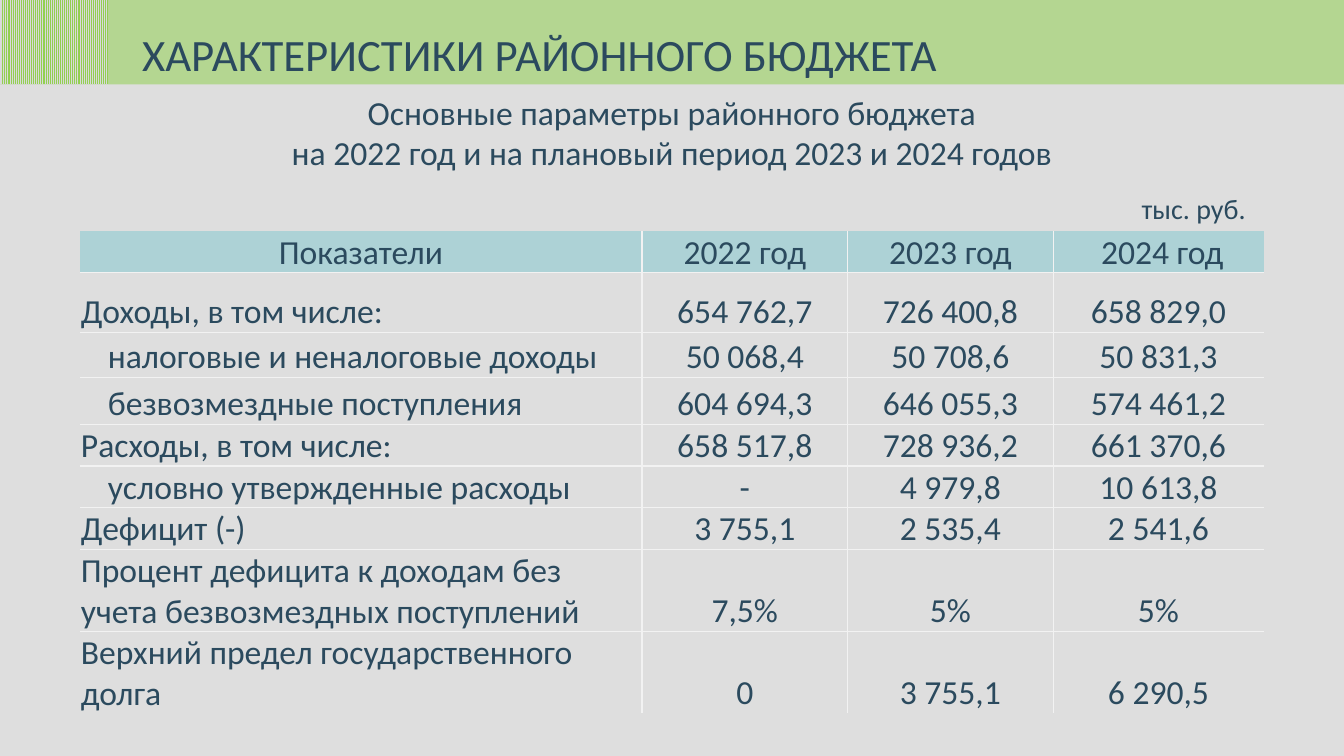
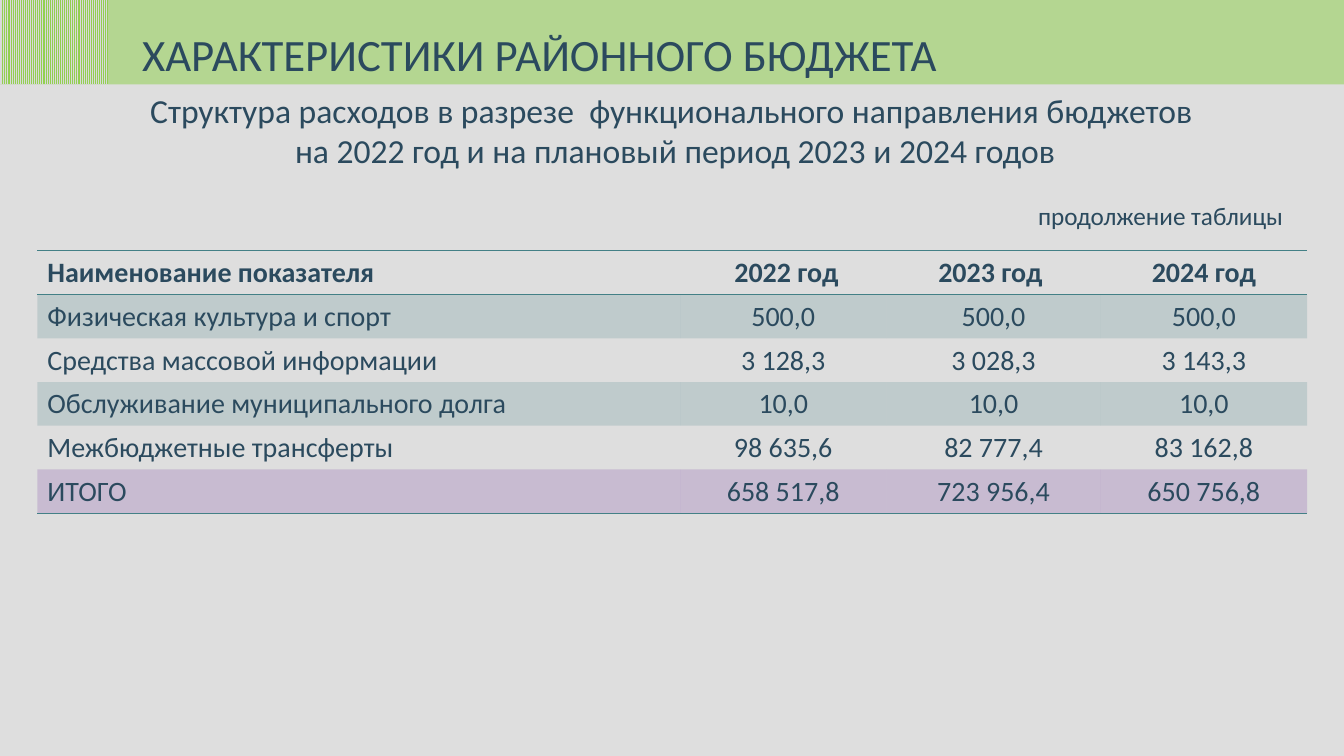
import pptx
import pptx.dml.color
import pptx.enum.dml
import pptx.enum.shapes
import pptx.enum.text
import pptx.oxml
import pptx.oxml.ns
import pptx.util

Cm = pptx.util.Cm
Pt = pptx.util.Pt
qn = pptx.oxml.ns.qn
ALIGN = pptx.enum.text.PP_ALIGN
ANCHOR = pptx.enum.text.MSO_ANCHOR

COLORS = {
    "background": "DEDEDE",
    "text": "2B4A5E",
    "green": "92D050",
    "stripe": "D9D9D9",
    "header": "ADD2D6",
    "grid": "F2F2F2",
    "teal": "438086",
    "total": "7030A0",
}
FONT = "Calibri"
TITLE = "ХАРАКТЕРИСТИКИ РАЙОННОГО БЮДЖЕТА"
SLIDE_W, SLIDE_H, BAND_H = 33.87, 19.05, 2.13
NO_STYLE = "{2D5ABB26-0587-4C30-8999-92F81FD0307C}"

PARAMETERS = [
    ("Показатели", "2022 год", "2023 год", " 2024 год"),
    ("Доходы, в том числе:", "654 762,7", "726 400,8", "658 829,0"),
    ("налоговые и неналоговые доходы", "50 068,4", "50 708,6", "50 831,3"),
    ("безвозмездные поступления", "604 694,3", "646 055,3", "574 461,2"),
    ("Расходы, в том числе:", "658 517,8", "728 936,2", "661 370,6"),
    ("условно утвержденные расходы", "-", "4 979,8", "10 613,8"),
    ("Дефицит (-)", "3 755,1", "2 535,4", "2 541,6"),
    ("Процент дефицита к доходам без учета безвозмездных поступлений", "7,5%", "5%", "5%"),
    ("Верхний предел государственного долга", "0", "3 755,1", "6 290,5"),
]
INDENTED_ROWS = (2, 3, 5)

EXPENSES = [
    ("Наименование показателя", " 2022 год", "2023 год ", "2024 год"),
    ("Физическая культура и спорт", "500,0", "500,0", "500,0"),
    ("Средства массовой информации", "3 128,3", "3 028,3", "3 143,3"),
    ("Обслуживание муниципального долга", "10,0", "10,0", "10,0"),
    ("Межбюджетные трансферты", "98 635,6", "82 777,4", "83 162,8"),
    ("ИТОГО", "658 517,8", "723 956,4", "650 756,8"),
]


def rgb(name):
    """Return the named colour."""
    return pptx.dml.color.RGBColor.from_string(COLORS[name])


def apply(target, values):
    """Set every attribute in a dict of format values."""
    for name, value in values.items():
        setattr(target, name, value)


def paint(fill, props, color, alpha=100):
    """Fill with a solid colour at a given opacity in percent."""
    fill.solid()
    fill.fore_color.rgb = rgb(color)
    if alpha < 100:
        clr = props.find(qn("a:solidFill")).find(qn("a:srgbClr"))
        clr.append(clr.makeelement(qn("a:alpha"), {"val": str(alpha * 1000)}))


def write(tf, lines, size, align=ALIGN.LEFT, bold=False):
    """Write one paragraph for each line of text."""
    for i, line in enumerate(lines):
        p = tf.paragraphs[0] if i == 0 else tf.add_paragraph()
        p.alignment = align
        r = p.add_run()
        r.text = line
        apply(r.font, {"name": FONT, "size": Pt(size), "bold": bold})
        r.font.color.rgb = rgb("text")


def add_text(s, box, lines, size, align=ALIGN.LEFT, wrap=False):
    """Add a text box that grows with its text."""
    tf = s.shapes.add_textbox(*map(Cm, box)).text_frame
    apply(tf, {"word_wrap": wrap,
               "auto_size": pptx.enum.text.MSO_AUTO_SIZE.SHAPE_TO_FIT_TEXT})
    write(tf, lines, size, align)


def add_block(s, box):
    """Add a plain rectangle without outline or shadow."""
    sp = s.shapes.add_shape(pptx.enum.shapes.MSO_SHAPE.RECTANGLE, *map(Cm, box))
    sp.shadow.inherit = False
    sp.line.fill.background()
    return sp


def add_header(s, box):
    """Add the title band with its striped corner."""
    x, y, w, h = box
    band = add_block(s, box)
    paint(band.fill, band.element.spPr, "green", 54)
    add_text(s, (x + 3.33, y + 0.56, 20.75, 1.62), [TITLE], 32)
    corner = add_block(s, (x, y, 2.72, h))
    corner.fill.patterned()
    corner.fill.pattern = pptx.enum.dml.MSO_PATTERN.LIGHT_VERTICAL
    corner.fill.fore_color.rgb = rgb("green")
    corner.fill.back_color.rgb = rgb("stripe")


def add_slide(prs):
    """Add a blank slide with the shared background and header."""
    s = prs.slides.add_slide(prs.slide_layouts[6])
    s.background.fill.solid()
    s.background.fill.fore_color.rgb = rgb("background")
    add_header(s, (0, 0, SLIDE_W, BAND_H))
    return s


def add_borders(cell, sides, color):
    """Draw one-point borders on the given sides of a cell."""
    tcPr = cell._tc.get_or_add_tcPr()
    for side in "LRTB":
        if side in sides:
            tcPr.append(pptx.oxml.parse_xml(
                f'<a:ln{side} {pptx.oxml.ns.nsdecls("a")} w="12700"><a:solidFill>'
                f'<a:srgbClr val="{COLORS[color]}"/></a:solidFill></a:ln{side}>'))


def add_table(s, box, cols, rows, records, size, line, style):
    """Add a table whose cells are formatted by style(row, column)."""
    frame = s.shapes.add_table(len(rows), len(cols), *map(Cm, box))
    next(frame.element.iter(qn("a:tableStyleId"))).text = NO_STYLE
    table = frame.table
    for column, width in zip(table.columns, cols):
        column.width = Cm(width)
    for row, height in zip(table.rows, rows):
        row.height = Cm(height)
    for i, record in enumerate(records):
        for j, text in enumerate(record):
            cell = table.cell(i, j)
            look = style(i, j)
            apply(cell, look.get("cell", {}))
            add_borders(cell, look["sides"], line)
            if look["fill"]:
                paint(cell.fill, cell._tc.tcPr, *look["fill"])
            else:
                cell.fill.background()
            write(cell.text_frame, [text], size,
                  ALIGN.CENTER if j or look.get("center") else ALIGN.LEFT,
                  look.get("bold", False))


def parameter_style(i, j):
    """Style the parameters table: inner grid and coloured heading."""
    last_row, last_col = len(PARAMETERS) - 1, len(PARAMETERS[0]) - 1
    inner = {"L": j > 0, "R": j < last_col, "T": i > 0, "B": i < last_row}
    indent = j == 0 and i in INDENTED_ROWS
    return {
        "cell": {"vertical_anchor": ANCHOR.BOTTOM,
                 "margin_left": Cm(0.71 if indent else 0.03),
                 "margin_right": Cm(0.03), "margin_top": Cm(0.03), "margin_bottom": Cm(0)},
        "sides": [side for side, shown in inner.items() if shown],
        "fill": None if i else ("header",),
        "center": i == 0,
    }


def expense_style(i, j):
    """Style the expenses table: bands, bold heading and total."""
    last = len(EXPENSES) - 1
    fill = ("total", 20) if i == last else ("teal", 20) if i % 2 else None
    return {"sides": {0: "TB", last: "B"}.get(i, ""), "fill": fill, "bold": i == 0}


def parameters_slide(prs):
    """Build the slide with the main budget parameters."""
    s = add_slide(prs)
    add_table(s, (2.01, 5.82, 29.85, 12.12), (14.17, 5.18, 5.18, 5.31),
              (1.04, 1.52, 1.12, 1.19, 1.04, 1.04, 1.04, 2.07, 2.06),
              PARAMETERS, 24, "grid", parameter_style)
    add_text(s, (28.52, 4.7, 3.15, 1.12), ["тыс. руб."], 20)
    add_text(s, (7.01, 2.18, 19.84, 2.31),
             ["Основные параметры районного бюджета",
              "на 2022 год и на плановый период 2023 и 2024 годов"], 24, ALIGN.CENTER)


def expenses_slide(prs):
    """Build the slide with the structure of expenses."""
    s = add_slide(prs)
    add_text(s, (0.36, 2.13, 33.12, 2.31),
             ["Структура расходов в разрезе  функционального направления бюджетов",
              " на 2022 год и на плановый период 2023 и 2024 годов"],
             24, ALIGN.CENTER, True)
    add_table(s, (0.94, 6.32, 32, 6.6), (16.2, 5.2, 5.4, 5.2), [1.1] * len(EXPENSES),
              EXPENSES, 20, "teal", expense_style)
    add_text(s, (25.91, 4.93, 6.76, 1.02), ["продолжение таблицы"], 18)


def main():
    """Build and save the presentation."""
    prs = pptx.Presentation()
    apply(prs, {"slide_width": Cm(SLIDE_W), "slide_height": Cm(SLIDE_H)})
    parameters_slide(prs)
    expenses_slide(prs)
    prs.save("out.pptx")


if __name__ == "__main__":
    main()
